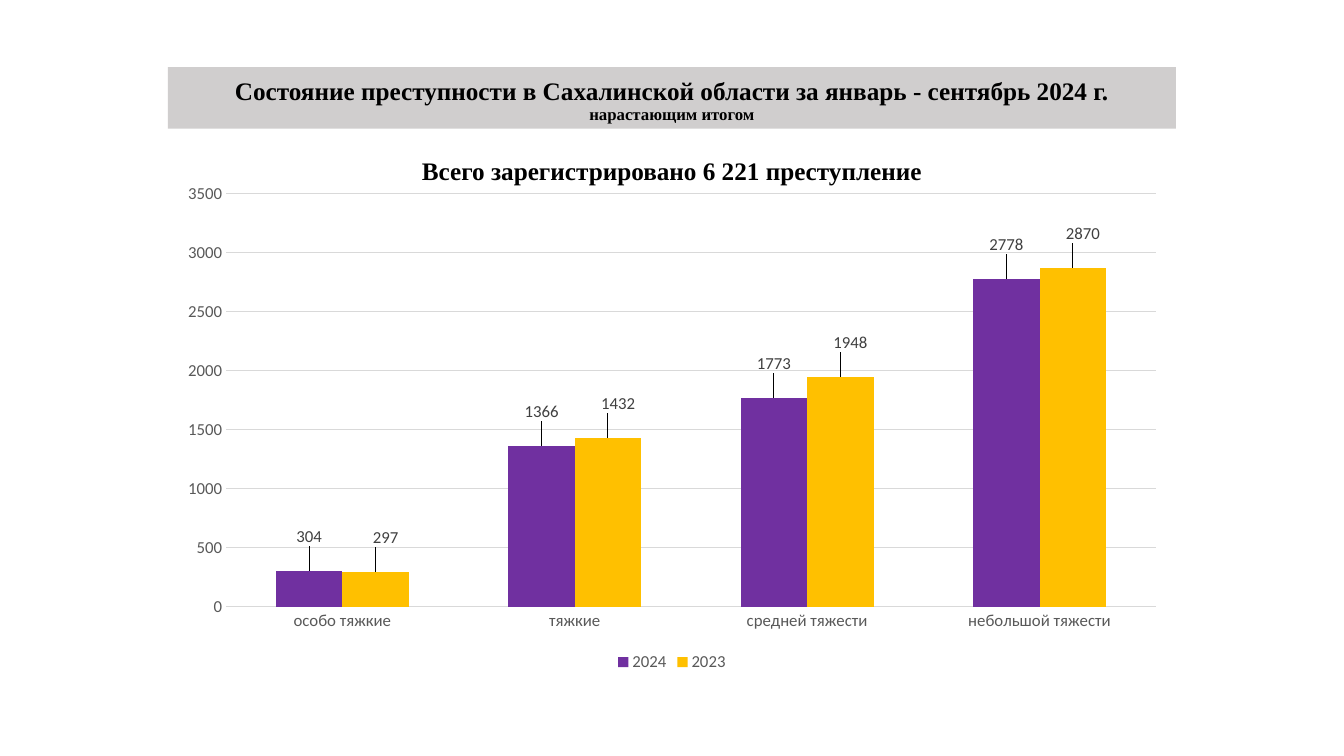
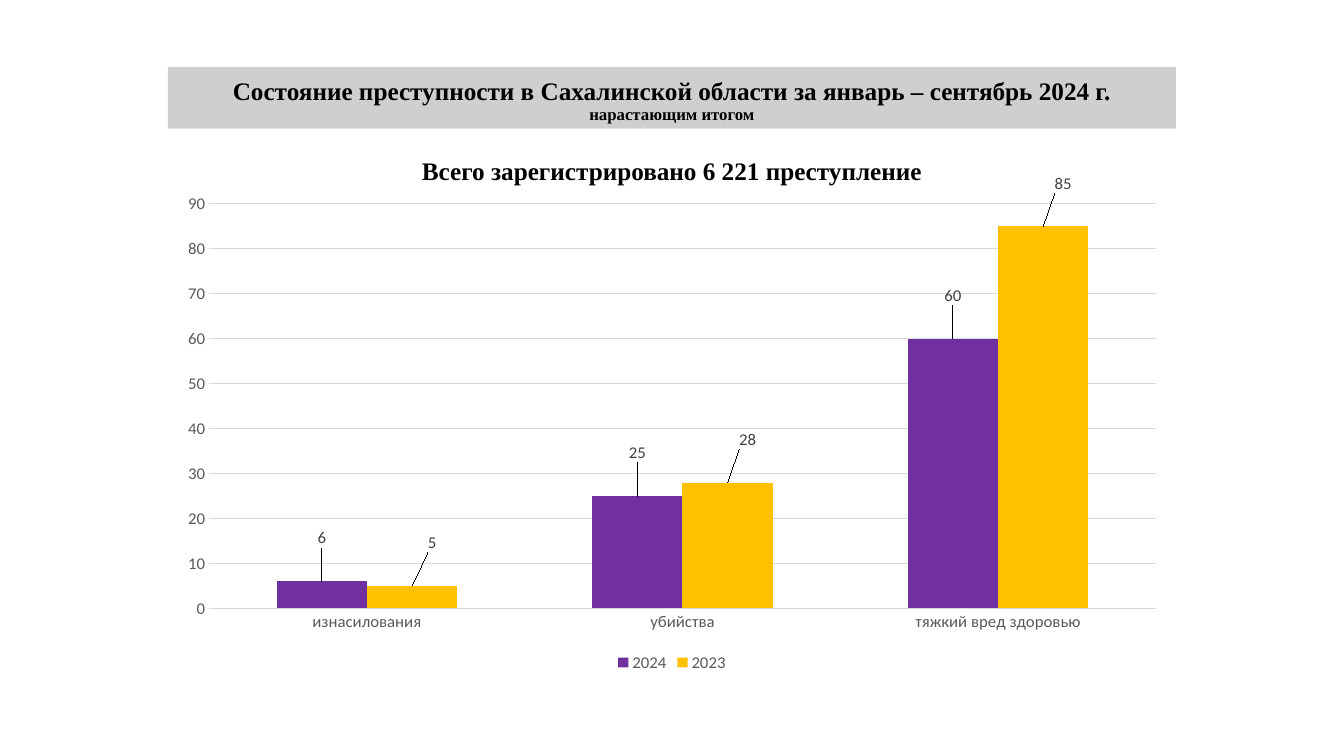
from lxml.etree import SubElement
from pptx import Presentation
from pptx.chart.data import CategoryChartData
from pptx.dml.color import RGBColor
from pptx.enum.chart import XL_CHART_TYPE, XL_LABEL_POSITION, XL_LEGEND_POSITION, XL_TICK_MARK
from pptx.enum.shapes import MSO_SHAPE
from pptx.enum.text import MSO_ANCHOR, PP_ALIGN
from pptx.oxml.ns import qn
from pptx.util import Pt

BLACK = "000000"
BAND = "D0CECE"
AXIS_TEXT = "595959"
LABEL_TEXT = "404040"
GRID = "D9D9D9"
SERIES_COLORS = {"2024": "7030A0", "2023": "FFC000"}
TITLE_FONT = "Times New Roman"
CHART_FONT = "Calibri"

LEFT, WIDTH = 120, 720
TITLE_BOX = (LEFT, 48, WIDTH, 44)
SUBTITLE_BOX = (LEFT, 111.6, WIDTH, 26)
CHART_BOX = (LEFT, 124, WIDTH, 359)

SUBTITLE = "Всего зарегистрировано 6 221 преступление"
SLIDES = [
    {
        "title": "Состояние преступности в Сахалинской области за январь - сентябрь 2024 г.",
        "categories": ["особо тяжкие", "тяжкие", "средней тяжести", "небольшой тяжести"],
        "values": {"2024": [304, 1366, 1773, 2778], "2023": [297, 1432, 1948, 2870]},
        "label_shifts": {"2024": (0, -0.04), "2023": (0.01, -0.04)},
    },
    {
        "title": "Состояние преступности в Сахалинской области за январь – сентябрь 2024 г.",
        "categories": ["изнасилования", "убийства", "тяжкий вред здоровью"],
        "values": {"2024": [6, 25, 60], "2023": [5, 28, 85]},
        "label_shifts": {"2024": (0, -0.06), "2023": (0.02, -0.06)},
    },
]


def color(value):
    """Turn a hex string into a colour."""
    return RGBColor.from_string(value)


def set_font(font, name, size, fill, bold=False):
    """Set the face, size, colour and weight of a font."""
    font.name = name
    font.size = Pt(size)
    font.bold = bold
    font.color.rgb = color(fill)


def write_heading(shape, text, sizes, line_spacing):
    """Write centred bold text with one size for each line."""
    shape.text_frame.word_wrap = True
    paragraph = shape.text_frame.paragraphs[0]
    paragraph.text = text
    paragraph.alignment = PP_ALIGN.CENTER
    paragraph.line_spacing = line_spacing
    for run, size in zip(paragraph.runs, sizes):
        set_font(run.font, TITLE_FONT, size, BLACK, bold=True)
    return paragraph


def add_title_band(slide, box, title):
    """Add the grey band with the title and its small second line."""
    band = slide.shapes.add_shape(MSO_SHAPE.RECTANGLE, *map(Pt, box))
    band.shadow.inherit = False
    band.fill.solid()
    band.fill.fore_color.rgb = color(BAND)
    band.line.fill.background()
    band.text_frame.vertical_anchor = MSO_ANCHOR.BOTTOM
    write_heading(band, title + "\vнарастающим итогом", (18, 12), 0.9)


def add_subtitle(slide, box):
    """Add the line with the total above the chart."""
    subtitle = slide.shapes.add_textbox(*map(Pt, box))
    paragraph = write_heading(subtitle, SUBTITLE, (18,), 0.8)
    paragraph.space_before = Pt(10)


def shift_label(label, shift):
    """Move a data label by fractions of the chart size."""
    label.position = XL_LABEL_POSITION.OUTSIDE_END
    element = label._dLbl
    layout = SubElement(element, qn("c:layout"))
    element.find(qn("c:idx")).addnext(layout)
    manual = SubElement(layout, qn("c:manualLayout"))
    for axis, value in zip("xy", shift):
        SubElement(manual, qn("c:" + axis)).set("val", str(value))


def style_axis(axis):
    """Hide the line and ticks of an axis and set its font."""
    axis.major_tick_mark = XL_TICK_MARK.NONE
    axis.minor_tick_mark = XL_TICK_MARK.NONE
    axis.format.line.fill.background()
    set_font(axis.tick_labels.font, CHART_FONT, 12, AXIS_TEXT)


def style_series(series, shift):
    """Colour a series and place its data labels."""
    series.format.fill.solid()
    series.format.fill.fore_color.rgb = color(SERIES_COLORS[series.name])
    labels = series.data_labels
    labels.show_value = True
    labels.position = XL_LABEL_POSITION.OUTSIDE_END
    set_font(labels.font, CHART_FONT, 12, LABEL_TEXT)
    for index in range(len(series.values)):
        label = series.points[index].data_label
        set_font(label.font, CHART_FONT, 12, LABEL_TEXT)
        shift_label(label, shift)


def add_column_chart(slide, box, categories, values, label_shifts):
    """Add the column chart comparing the two years."""
    data = CategoryChartData()
    data.categories = categories
    for name, numbers in values.items():
        data.add_series(name, numbers)
    chart = slide.shapes.add_chart(XL_CHART_TYPE.COLUMN_CLUSTERED, *map(Pt, box), data).chart
    set_font(chart.font, CHART_FONT, 10, BLACK)
    chart.has_title = False
    chart.has_legend = True
    chart.legend.position = XL_LEGEND_POSITION.BOTTOM
    chart.legend.include_in_layout = False
    set_font(chart.legend.font, CHART_FONT, 12, AXIS_TEXT)
    style_axis(chart.category_axis)
    style_axis(chart.value_axis)
    grid_line = chart.value_axis.major_gridlines.format.line
    grid_line.color.rgb = color(GRID)
    grid_line.width = Pt(0.75)
    plot = chart.plots[0]
    plot.vary_by_categories = False
    plot.gap_width = 150
    for series in plot.series:
        style_series(series, label_shifts[series.name])


def add_crime_slide(presentation, title, categories, values, label_shifts):
    """Add one slide with title band, total and chart."""
    slide = presentation.slides.add_slide(presentation.slide_layouts[6])
    add_title_band(slide, TITLE_BOX, title)
    add_subtitle(slide, SUBTITLE_BOX)
    add_column_chart(slide, CHART_BOX, categories, values, label_shifts)


def main():
    """Build and save the presentation."""
    presentation = Presentation()
    presentation.slide_width = Pt(960)
    presentation.slide_height = Pt(540)
    for content in SLIDES:
        add_crime_slide(presentation, **content)
    presentation.save("out.pptx")


if __name__ == "__main__":
    main()
